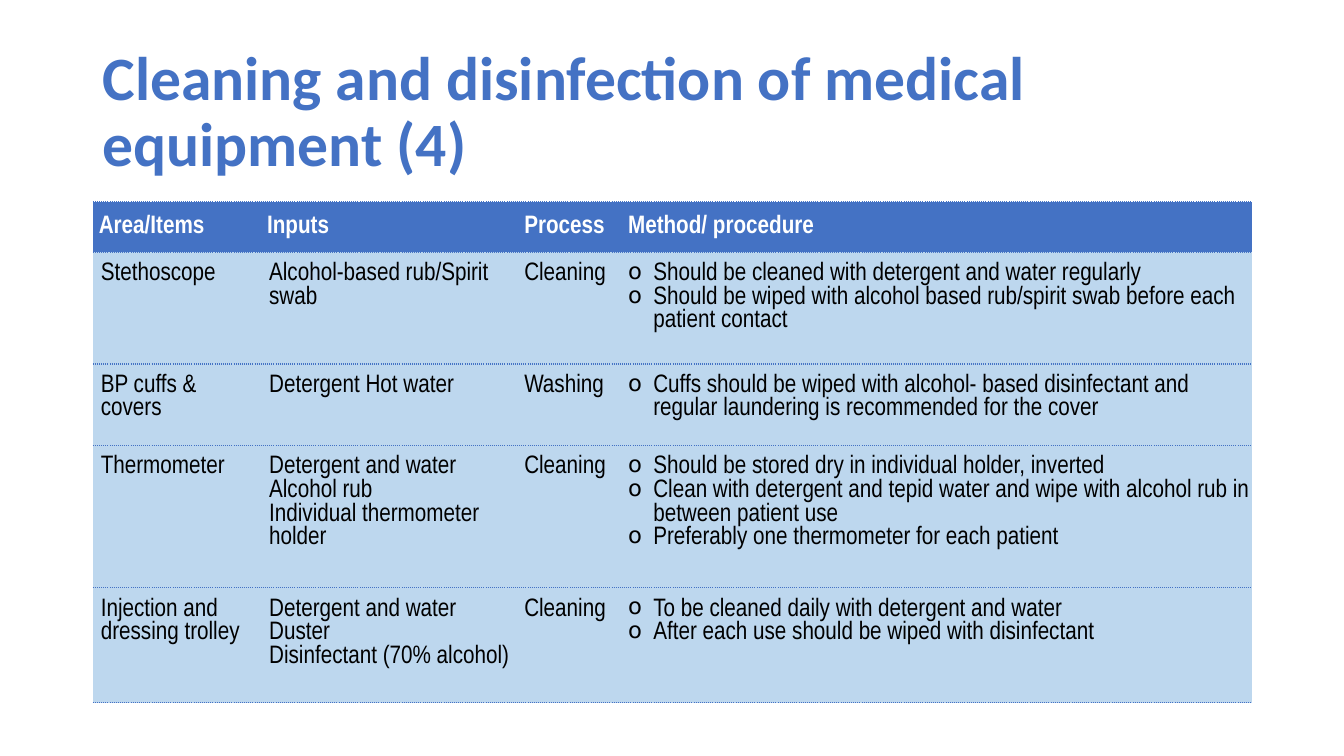
from lxml.etree import SubElement
from pptx import Presentation
from pptx.dml.color import RGBColor
from pptx.enum.text import MSO_ANCHOR
from pptx.oxml.ns import qn
from pptx.util import Inches, Pt

TITLE = "Cleaning and disinfection of medical equipment (4)"
HEADER = ["Area/Items", "Inputs", "Process", "Method/ procedure"]
ITEMS = [
    (["Stethoscope"], ["Alcohol-based rub/Spirit swab"], ["Cleaning"],
     ["Should be cleaned with detergent and water regularly",
      "Should be wiped with alcohol based rub/spirit swab before each patient contact"]),
    (["BP cuffs & covers"], ["Detergent Hot water"], ["Washing"],
     ["Cuffs should be wiped with alcohol- based disinfectant and regular "
      "laundering is recommended for the cover"]),
    (["Thermometer"],
     ["Detergent and water", "Alcohol rub", "Individual thermometer holder"],
     ["Cleaning"],
     ["Should be stored dry in individual holder, inverted",
      "Clean with detergent and tepid water and wipe with alcohol rub in between patient use",
      "Preferably one thermometer for each patient"]),
    (["Injection and dressing trolley"],
     ["Detergent and water", "Duster", "Disinfectant (70% alcohol)"],
     ["Cleaning"],
     ["To be cleaned daily with detergent and water",
      "After each use should be wiped with disinfectant"]),
]
COL_WIDTHS = [1.67, 2.53, 1.05, 6.25]
ROW_HEIGHTS = [0.5, 1.11, 0.81, 1.41, 1.14]
HEADER_INDENTS = [0.06, 0.06, 0.08, 0.06]
LEFT, WIDTH = 0.92, 11.5
BLUE, PALE, WHITE, BLACK = "4472C4", "BDD7EE", "FFFFFF", "000000"


def color(value):
    return RGBColor.from_string(value)


def add_bullet(p):
    pPr = p._p.get_or_add_pPr()
    SubElement(pPr, qn("a:buSzPct"), val="90000")
    SubElement(pPr, qn("a:buChar"), char="o")
    tabs = SubElement(pPr, qn("a:tabLst"))
    SubElement(tabs, qn("a:tab"), pos=str(Inches(0.37)), algn="l")


def write(tf, lines, font="Arial Narrow", size=18, fill=BLACK, bold=False,
          indent=0, hanging=0, bullet=False, spacing=None):
    for i, line in enumerate(lines):
        p = tf.add_paragraph() if i else tf.paragraphs[0]
        pPr = p._p.get_or_add_pPr()
        pPr.set("marL", str(Inches(indent)))
        pPr.set("indent", str(Inches(-hanging)))
        if bullet:
            add_bullet(p)
        if spacing:
            p.line_spacing = spacing
        r = p.add_run()
        r.text = line
        r.font.name, r.font.size, r.font.bold = font, Pt(size), bold
        r.font.color.rgb = color(fill)


def style_cell(cell, fill, anchor):
    """Dotted rules above and below, none at the sides, then fill and margins."""
    tcPr = cell._tc.get_or_add_tcPr()
    for side in "LRTB":
        ln = SubElement(tcPr, qn(f"a:ln{side}"), w=str(Pt(1)))
        if side in "LR":
            SubElement(ln, qn("a:noFill"))
        else:
            solid = SubElement(ln, qn("a:solidFill"))
            SubElement(solid, qn("a:srgbClr"), val=BLUE)
            SubElement(ln, qn("a:prstDash"), val="sysDot")
    cell.fill.solid()
    cell.fill.fore_color.rgb = color(fill)
    cell.margin_left = cell.margin_right = 0
    cell.margin_top = cell.margin_bottom = Inches(0.1)
    cell.vertical_anchor = anchor


prs = Presentation()
prs.slide_width, prs.slide_height = Inches(13.33), Inches(7.5)
s = prs.slides.add_slide(prs.slide_layouts[6])

title = s.shapes.add_textbox(Inches(LEFT), Inches(0.4), Inches(WIDTH), Inches(1.45))
title.text_frame.word_wrap = True
title.text_frame.vertical_anchor = MSO_ANCHOR.MIDDLE
write(title.text_frame, [TITLE], font="Calibri", size=44, fill=BLUE, bold=True,
      spacing=0.9)

table = s.shapes.add_table(len(ROW_HEIGHTS), len(COL_WIDTHS), Inches(LEFT), Inches(2),
                           Inches(WIDTH), Inches(sum(ROW_HEIGHTS))).table
table.horz_banding = False
for column, width in zip(table.columns, COL_WIDTHS):
    column.width = Inches(width)
for row, height in zip(table.rows, ROW_HEIGHTS):
    row.height = Inches(height)

for c, (label, indent) in enumerate(zip(HEADER, HEADER_INDENTS)):
    cell = table.cell(0, c)
    style_cell(cell, BLUE, MSO_ANCHOR.MIDDLE)
    write(cell.text_frame, [label], fill=WHITE, bold=True, indent=indent)

for r, item in enumerate(ITEMS, start=1):
    for c, lines in enumerate(item):
        cell = table.cell(r, c)
        style_cell(cell, PALE, MSO_ANCHOR.TOP)
        if c == len(HEADER) - 1:
            write(cell.text_frame, lines, indent=0.31, hanging=0.25, bullet=True)
        else:
            write(cell.text_frame, lines, indent=0.08)

prs.save("out.pptx")
